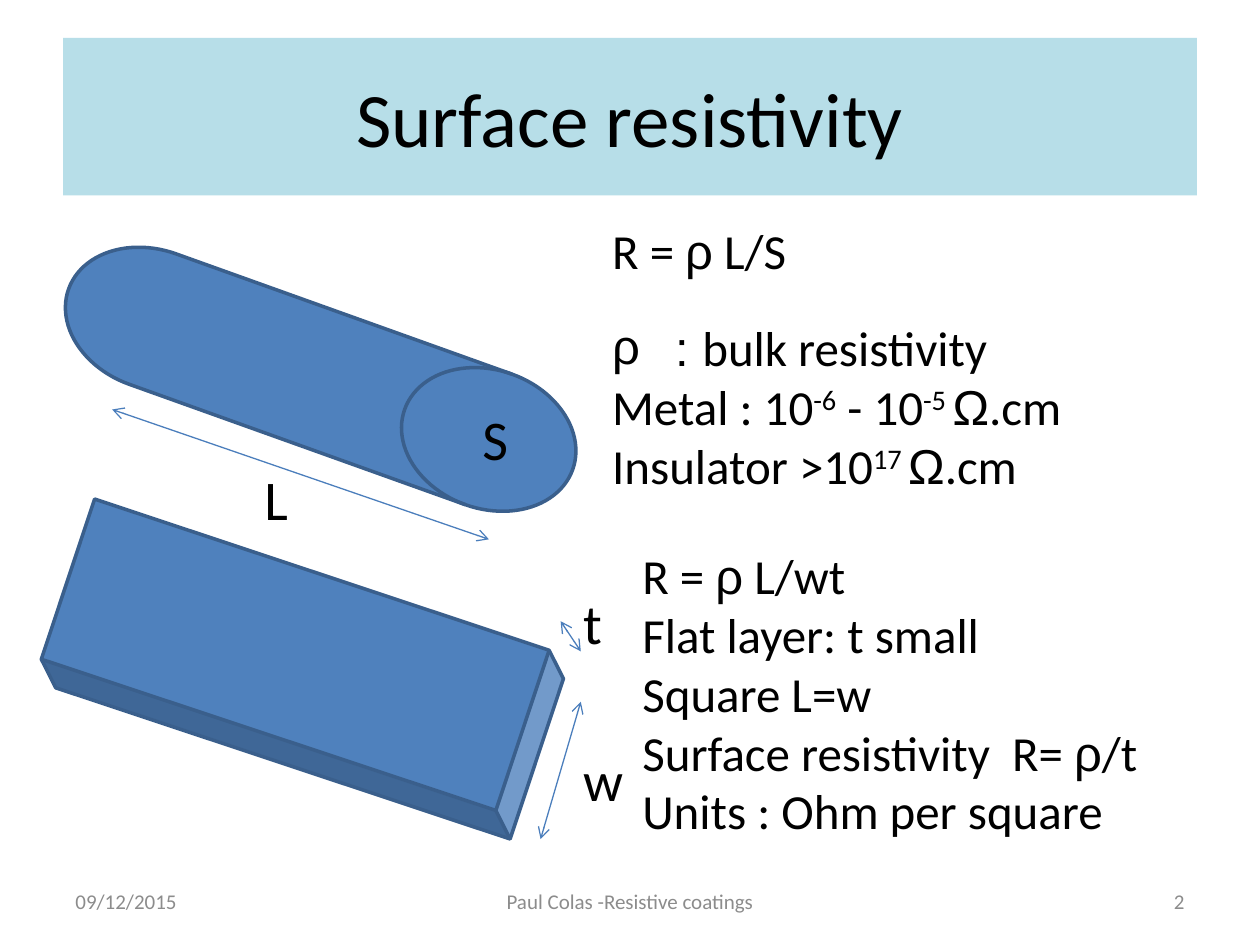
"""Build the surface resistivity slide with its two conductor diagrams."""
import pptx
import pptx.dml.color
import pptx.enum.shapes
import pptx.enum.text
import pptx.oxml
import pptx.oxml.ns
import pptx.util

Pt = pptx.util.Pt
RGBColor = pptx.dml.color.RGBColor
Shape = pptx.enum.shapes.MSO_SHAPE
Align = pptx.enum.text.PP_ALIGN
Anchor = pptx.enum.text.MSO_ANCHOR

BLACK = RGBColor(0x00, 0x00, 0x00)
GREY = RGBColor(0x8C, 0x8C, 0x8C)
PALE_BLUE = RGBColor(0xB7, 0xDE, 0xE8)
BLUE = RGBColor(0x4F, 0x81, 0xBD)
EDGE_BLUE = RGBColor(0x3A, 0x5F, 0x8C)
ARROW_BLUE = RGBColor(0x4B, 0x7E, 0xBC)
ARIAL_SPANS = {"ρ", "Ω", ": "}

BULK_LINES = [
    ["R = ", "ρ", " L/S"],
    [": ", "bulk resistivity"],
    ["Metal : 10", "^-6", " - 10", "^-5 ", "Ω", ".cm"],
    ["Insulator >10", "^17 ", "Ω", ".cm"],
]
SURFACE_LINES = [
    ["R = ", "ρ", " L/wt"],
    ["Flat layer: t small"],
    ["Square L=w"],
    ["Surface resistivity  R= ", "ρ", "/t"],
    ["Units : Ohm per square"],
]


def new_element(tag, **attributes):
    """Return a DrawingML element with the given attributes."""
    element = pptx.oxml.parse_xml(f"<a:{tag} {pptx.oxml.ns.nsdecls('a')}/>")
    for name, value in attributes.items():
        element.set(name, value)
    return element


def write_text(frame, lines, size=28, color=BLACK, align=Align.LEFT, anchor=Anchor.TOP):
    """Write lines of spans, where a leading caret marks a superscript."""
    frame.word_wrap = True
    frame.vertical_anchor = anchor
    for index, line in enumerate(lines):
        para = frame.add_paragraph() if index else frame.paragraphs[0]
        para.alignment = align
        for text in line:
            span = para.add_run()
            span.text = text.removeprefix("^")
            span.font.size = Pt(size)
            span.font.name = "Arial" if text in ARIAL_SPANS else "Calibri"
            span.font.color.rgb = color
            if text.startswith("^"):
                span._r.get_or_add_rPr().set("baseline", "30000")


def add_symbol_bullet(para, symbol, indent, space):
    """Give a paragraph a hanging symbol and space above."""
    para.space_before = Pt(space)
    properties = para._p.get_or_add_pPr()
    properties.set("marL", str(Pt(indent)))
    properties.set("indent", str(-Pt(indent)))
    properties.append(new_element("buFont", typeface="Arial"))
    properties.append(new_element("buChar", char=symbol))


class SlideWriter:
    """Hold the diagram style and the page being built."""

    edge_width = 2
    arrow_width = 0.75

    def __init__(self, page):
        """Start writing on a page."""
        self.page = page

    def title(self, text, left, top, width, height):
        """Fill and place the title placeholder."""
        box = self.page.shapes.title
        box.left, box.top, box.width, box.height = map(Pt, (left, top, width, height))
        box.fill.solid()
        box.fill.fore_color.rgb = PALE_BLUE
        write_text(box.text_frame, [[text]], size=44, align=Align.CENTER, anchor=Anchor.MIDDLE)

    def text(self, lines, left, top, width, height, **style):
        """Add a text box and return its frame."""
        box = self.page.shapes.add_textbox(*map(Pt, (left, top, width, height)))
        write_text(box.text_frame, lines, **style)
        return box.text_frame

    def solid(self, kind, left, top, width, height, rotation):
        """Add a rotated blue body."""
        body = self.page.shapes.add_shape(kind, *map(Pt, (left, top, width, height)))
        body.rotation = rotation
        body.shadow.inherit = False
        body.fill.solid()
        body.fill.fore_color.rgb = BLUE
        body.line.color.rgb = EDGE_BLUE
        body.line.width = Pt(self.edge_width)
        return body

    def dimension(self, *ends):
        """Add a double-headed dimension arrow."""
        arrow = self.page.shapes.add_connector(
            pptx.enum.shapes.MSO_CONNECTOR.STRAIGHT, *map(Pt, ends))
        arrow.line.color.rgb = ARROW_BLUE
        arrow.line.width = Pt(self.arrow_width)
        outline = arrow.line._get_or_add_ln()
        for tag in ("headEnd", "tailEnd"):
            outline.append(new_element(tag, type="arrow"))
        arrow._element.spPr.append(new_element("effectLst"))


def main():
    """Build and save the deck."""
    deck = pptx.Presentation()
    deck.slide_width, deck.slide_height = Pt(720), Pt(540)
    writer = SlideWriter(deck.slides.add_slide(deck.slide_layouts[5]))

    writer.title("Surface resistivity", 36, 21.6, 648, 90)
    writer.solid(Shape.FLOWCHART_DIRECT_ACCESS_STORAGE, 30.24, 177.12, 306, 79.2, 19.7)
    bulk = writer.text(BULK_LINES, 342.7, 122.4, 317.5, 164.9)
    add_symbol_bullet(bulk.paragraphs[1], "ρ", indent=36, space=22)

    slab = writer.solid(Shape.CUBE, 118.1, 239, 109.4, 286.6, 108.4)
    slab.adjustments[0] = 0.118

    for ends in (
        (64.1, 234, 279.4, 308.2),
        (308.9, 479.5, 331.9, 401),
        (331.9, 372.2, 320.4, 355),
    ):
        writer.dimension(*ends)
    for label, left, top, width in (
        ("S", 268.6, 227.5, 50.4),
        ("L", 144, 262, 50.4),
        ("w", 326.2, 422.6, 124.6),
        ("t", 326.2, 332.6, 124.6),
    ):
        writer.text([[label]], left, top, width, 46, size=32)
    writer.text(SURFACE_LINES, 360, 308.2, 345.6, 177.1)

    for text, left, width, align in (
        ("09/12/2015", 36, 168, Align.LEFT),
        ("Paul Colas -Resistive coatings", 246, 228, Align.CENTER),
        ("2", 516, 168, Align.RIGHT),
    ):
        writer.text([[text]], left, 500.4, width, 28.8,
                    size=12, color=GREY, align=align, anchor=Anchor.MIDDLE)
    deck.save("out.pptx")


if __name__ == "__main__":
    main()
